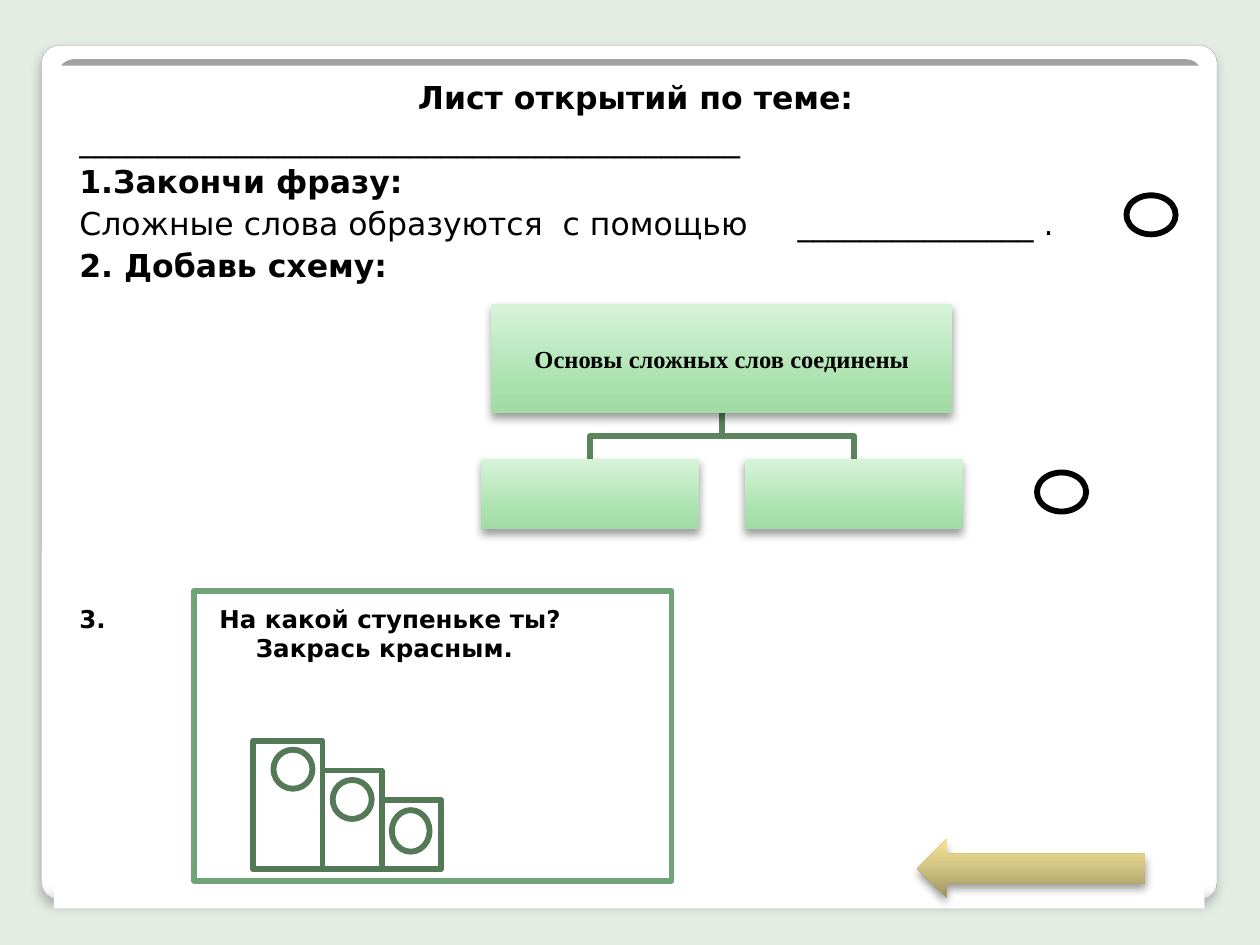
from dataclasses import dataclass

from lxml.etree import SubElement
from pptx import Presentation
from pptx.dml.color import RGBColor
from pptx.enum.shapes import MSO_SHAPE
from pptx.enum.text import MSO_ANCHOR, MSO_AUTO_SIZE, PP_ALIGN
from pptx.oxml import parse_xml
from pptx.oxml.ns import nsdecls, qn
from pptx.util import Inches, Pt

COLUMNS, ROWS = 100, 75  # one cell is a tenth of an inch


@dataclass(frozen=True)
class Theme:
    backdrop: str = "E3EDE4"
    paper: str = "FFFFFF"
    ink: str = "000000"
    bar: str = "A2A2A2"
    edge: str = "A4A4A4"
    branch: str = "5B835E"
    frame: str = "72A376"
    step: str = "547957"
    card: tuple = ((0, "FFFFFF"), (98, "FFFFFF"), (99, "F7F7F7"), (100, "DADADA"))
    green: tuple = ((0, "A3DBA7"), (25, "A9E1AD"), (100, "D7F4D9"))
    gold: tuple = ((0, "9C9260"), (60, "D7CA86"), (100, "F6E389"))
    card_shadow: tuple = (25, 6, 4)  # opacity in percent, blur, distance
    shadow: tuple = (40, 5.2, 3)
    font: str = "DejaVu Sans"
    box_font: str = "Times New Roman"
    large: float = 18
    small: float = 14
    stroke: float = 3.35
    gap: float = 2.5


class Sheet:
    def __init__(self, deck, theme):
        self.theme = theme
        self.cell_width = deck.slide_width / COLUMNS
        self.cell_height = deck.slide_height / ROWS
        self.page = deck.slides.add_slide(deck.slide_layouts[5])
        background = self.page.background.fill
        background.solid()
        background.fore_color.rgb = RGBColor.from_string(theme.backdrop)

    def place(self, left, top, width, height):
        return (round(left * self.cell_width), round(top * self.cell_height),
                round(width * self.cell_width), round(height * self.cell_height))

    def outline(self, shape, color, width=None):
        shape.line.color.rgb = RGBColor.from_string(color)
        shape.line.width = Pt(width or self.theme.stroke)

    def gradient(self, shape, stops, angle):
        shape.fill.gradient()
        shape.fill.gradient_angle = 360 - angle
        stop_list = shape._element.spPr.find(qn("a:gradFill")).find(qn("a:gsLst"))
        for stop in list(stop_list):
            stop_list.remove(stop)
        for position, color in stops:
            stop = SubElement(stop_list, qn("a:gs"), pos=str(position * 1000))
            SubElement(stop, qn("a:srgbClr"), val=color)

    def cast_shadow(self, shape, opacity, blur, distance):
        effects = shape._element.spPr.find(qn("a:effectLst"))
        effects.append(parse_xml(
            f'<a:outerShdw {nsdecls("a")} blurRad="{Pt(blur)}" dist="{Pt(distance)}" '
            f'dir="5400000" rotWithShape="0"><a:srgbClr val="{self.theme.ink}">'
            f'<a:alpha val="{opacity * 1000}"/></a:srgbClr></a:outerShdw>'))

    def shape(self, kind, area, fill=None, line=None, line_width=None,
              angle=270, shadow=None):
        shape = self.page.shapes.add_shape(kind, *self.place(*area))
        shape.shadow.inherit = False
        if isinstance(fill, tuple):
            self.gradient(shape, fill, angle)
        else:
            shape.fill.solid()
            shape.fill.fore_color.rgb = RGBColor.from_string(fill or self.theme.paper)
        if line:
            self.outline(shape, line, line_width)
        else:
            shape.line.fill.background()
        if shadow:
            self.cast_shadow(shape, *shadow)
        return shape

    def polyline(self, points, color):
        spots = [self.place(x, y, 0, 0)[:2] for x, y in points]
        builder = self.page.shapes.build_freeform(*spots[0])
        builder.add_line_segments(spots[1:], close=False)
        line = builder.convert_to_shape()
        line.shadow.inherit = False
        line.fill.background()
        self.outline(line, color)

    def set_lines(self, box, lines, size, font=None, align=PP_ALIGN.LEFT,
                  anchor=MSO_ANCHOR.TOP, insets=(0.2, 0.1, 0.1, 0.05), hanging=0):
        """Fill a box with (text, bold) lines."""
        frame = box.text_frame
        frame.word_wrap = True
        frame.auto_size = MSO_AUTO_SIZE.NONE
        frame.vertical_anchor = anchor
        (frame.margin_left, frame.margin_top,
         frame.margin_right, frame.margin_bottom) = map(Inches, insets)
        for index, (text, bold) in enumerate(lines):
            para = frame.add_paragraph() if index else frame.paragraphs[0]
            para.text = text
            para.alignment = align
            para.space_before = Pt(self.theme.gap)
            para.font.name = font or self.theme.font
            para.font.size = Pt(size)
            para.font.bold = bold
            para.font.color.rgb = RGBColor.from_string(self.theme.ink)
            if hanging:
                properties = para._p.get_or_add_pPr()
                properties.set("marL", str(Inches(hanging)))
                properties.set("indent", str(-Inches(hanging)))
        return frame

    def title(self, area, text):
        title = self.page.shapes.title
        title.left, title.top, title.width, title.height = self.place(*area)
        self.page.shapes._spTree.append(title._element)  # bring in front of the card
        self.set_lines(title, [(text, True)], self.theme.large, align=PP_ALIGN.CENTER)

    def text(self, area, lines, size):
        box = self.page.shapes.add_textbox(*self.place(*area))
        return self.set_lines(box, lines, size)

    def tab_stop(self, para, inches):
        stops = parse_xml(f'<a:tabLst {nsdecls("a")}>'
                          f'<a:tab pos="{Inches(inches)}" algn="l"/></a:tabLst>')
        properties = para._p.get_or_add_pPr()
        defaults = properties.find(qn("a:defRPr"))
        if defaults is None:
            properties.append(stops)
        else:
            defaults.addprevious(stops)


def main():
    deck = Presentation()
    deck.slide_width, deck.slide_height = Inches(10), Inches(7.5)
    theme = Theme()
    sheet = Sheet(deck, theme)

    # Paper card with a grey bar along its top
    card = sheet.shape(MSO_SHAPE.ROUNDED_RECTANGLE, (3.3, 3.6, 93.3, 67.8), theme.card,
                       theme.edge, 0.16, angle=90, shadow=theme.card_shadow)
    bar = sheet.shape(MSO_SHAPE.ROUNDED_RECTANGLE, (4.6, 4.7, 90.8, 60), theme.bar)
    for rounded in (card, bar):
        rounded.adjustments[0] = 0.021
    sheet.shape(MSO_SHAPE.RECTANGLE, (4.3, 5.2, 91.3, 66.9))

    # Heading and tasks
    sheet.title((4.3, 5.2, 91.3, 4.2), "Лист открытий по теме:")
    tasks = sheet.text((4.3, 8.5, 91.3, 15), [
        ("_" * 42, False),
        ("1.Закончи фразу:", True),
        ("Сложные слова образуются  с помощью\t" + "_" * 15 + " .", False),
        ("2. Добавь схему:", True),
    ], theme.large)
    sheet.tab_stop(tasks.paragraphs[2], 5.7)
    sheet.text((4.3, 46.9, 9, 5), [("3.", True)], theme.small)

    # Diagram: one parent and two empty children
    parent_left, parent_top, parent_width, parent_height = parent = (39, 24.1, 36.6, 8.7)
    middle, parent_bottom = parent_left + parent_width / 2, parent_top + parent_height
    child_top, child_width, child_height = 36.4, 17.3, 5.6
    child_lefts = (38.2, 59.1)
    bend = (parent_bottom + child_top) / 2
    for left in child_lefts:
        center = left + child_width / 2
        sheet.polyline([(middle, parent_bottom), (middle, bend),
                        (center, bend), (center, child_top)], theme.branch)
    for area in (parent, *((left, child_top, child_width, child_height)
                           for left in child_lefts)):
        box = sheet.shape(MSO_SHAPE.RECTANGLE, area, theme.green, shadow=theme.shadow)
        if area == parent:
            sheet.set_lines(box, [("Основы сложных слов соединены", True)], theme.small,
                            theme.box_font, PP_ALIGN.CENTER, MSO_ANCHOR.MIDDLE,
                            (0.01,) * 4)

    # Self-assessment frame with its staircase
    frame = sheet.shape(MSO_SHAPE.RECTANGLE, (15.4, 46.9, 37.9, 23), line=theme.frame)
    sheet.set_lines(frame, [("На какой ступеньке ты? Закрась красным.", True)],
                    theme.small, hanging=0.29)
    floor, rise = 69, 2.35
    for index, (left, width) in enumerate([(20.1, 5.5), (25.6, 4.7), (30.3, 4.7)]):
        top = 58.8 + index * rise
        sheet.shape(MSO_SHAPE.RECTANGLE, (left, top, width, floor - top), line=theme.step)
    for index, (width, height) in enumerate([(3.1, 3.1), (3.1, 3.1), (3, 3.3)]):
        sheet.shape(MSO_SHAPE.OVAL, (21.7 + index * 4.7, 59.5 + index * 2.4, width, height),
                    line=theme.step)

    # Back arrow and answer marks
    sheet.shape(MSO_SHAPE.LEFT_ARROW, (72.8, 66.6, 18.1, 4.7), theme.gold,
                shadow=theme.shadow)
    for left, top in [(89.4, 15.5), (82.3, 37.5)]:
        sheet.shape(MSO_SHAPE.OVAL, (left, top, 3.9, 3.1), line=theme.ink)

    deck.save("out.pptx")


if __name__ == "__main__":
    main()
